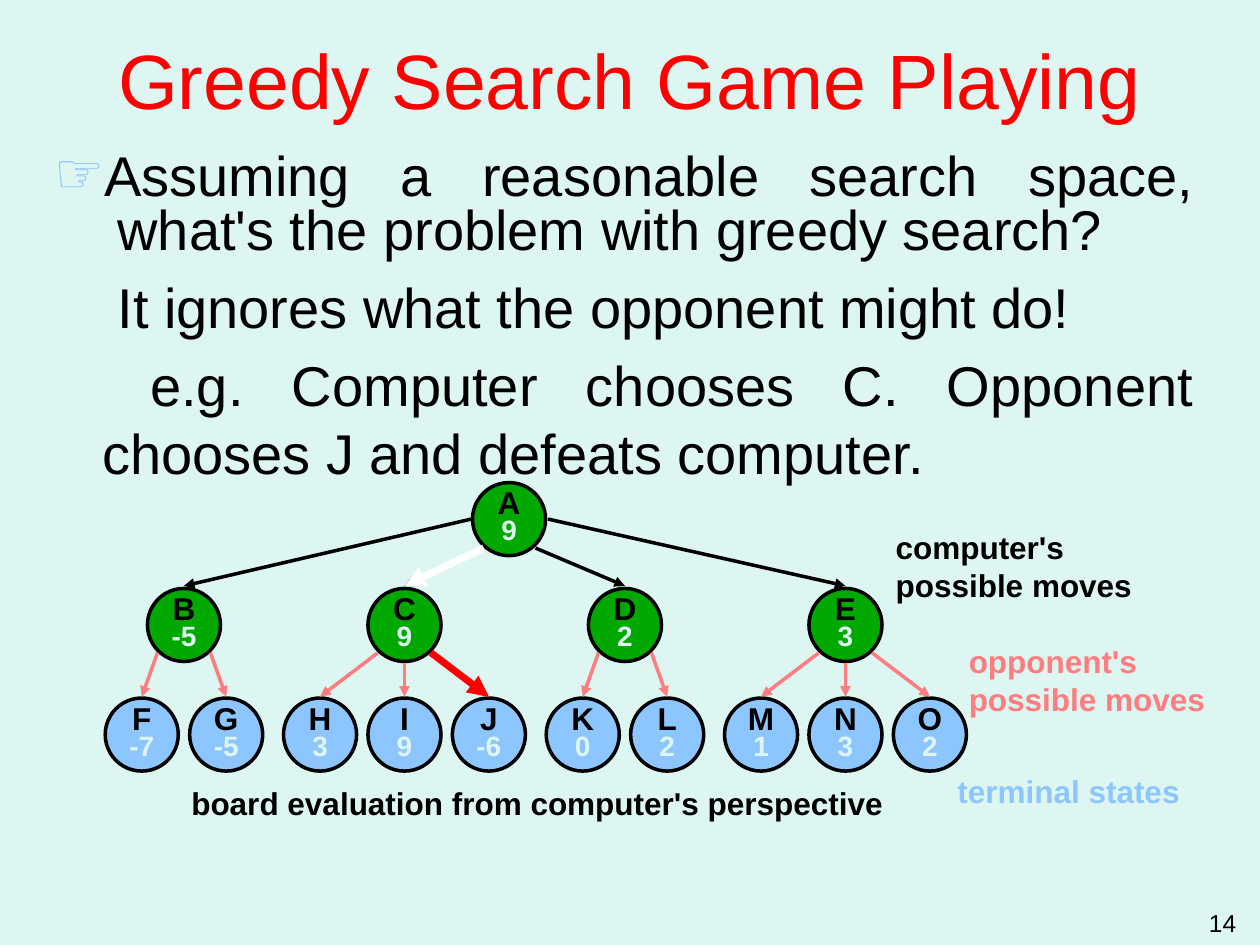
"""Build the greedy search slide with its two-level game tree."""
from dataclasses import dataclass
from lxml.etree import SubElement as Sub
from pptx import Presentation as Deck
from pptx.dml.color import RGBColor as Color
from pptx.enum.shapes import MSO_CONNECTOR as Wire, MSO_SHAPE as Form
from pptx.enum.text import MSO_ANCHOR as Anchor, MSO_AUTO_SIZE as Fit, PP_ALIGN as Align
from pptx.oxml.ns import qn
from pptx.util import Inches, Pt

BLACK = Color(0x00, 0x00, 0x00)
WHITE = Color(0xFF, 0xFF, 0xFF)
RED = Color(0xFF, 0x00, 0x00)
PINK = Color(0xFF, 0x7C, 0x80)
GREEN = Color(0x00, 0xA8, 0x00)
BLUE = Color(0x8D, 0xC6, 0xFF)
PALE = Color(0xDE, 0xF6, 0xF1)
SIZE = 0.58


@dataclass
class Node:
    name: str
    score: str
    mid: float
    top: float
    fill: Color


@dataclass
class Link:
    start: tuple[float, float]
    end: tuple[float, float]
    color: Color
    width: float = 2


@dataclass
class Label:
    text: str
    box: tuple[float, float, float, float]
    color: Color = BLACK
    size: float = 18
    bold: bool = True
    align: Align = Align.LEFT


def add_run(para, text: str, size: float, color: Color, bold: bool = False) -> None:
    run = para.add_run()
    run.text = text
    font = run.font
    font.name, font.size, font.bold = "Arial", Pt(size), bold
    font.color.rgb = color


def add_lines(para, text: str, size: float, color: Color, bold: bool = False) -> None:
    for i, line in enumerate(text.split("\n")):
        if i:
            para.add_line_break()
        add_run(para, line, size, color, bold)


def place(shape, left: float, top: float, width: float, height: float) -> None:
    shape.left, shape.top = Inches(left), Inches(top)
    shape.width, shape.height = Inches(width), Inches(height)


def draw_node(slide, node: Node) -> None:
    left = node.mid - SIZE / 2
    disc = slide.shapes.add_shape(
        Form.OVAL, Inches(left), Inches(node.top), Inches(SIZE), Inches(SIZE))
    disc.shadow.inherit = False
    disc.fill.solid()
    disc.fill.fore_color.rgb = node.fill
    disc.line.color.rgb = BLACK
    disc.line.width = Pt(2)
    frame = disc.text_frame
    frame.word_wrap = False
    frame.vertical_anchor = Anchor.MIDDLE
    rows = ((node.name, 18, BLACK), (node.score, 16, PALE))
    for i, (text, size, color) in enumerate(rows):
        para = frame.add_paragraph() if i else frame.paragraphs[0]
        para.alignment, para.line_spacing = Align.CENTER, 0.75
        add_run(para, text, size, color, True)


def draw_link(slide, link: Link) -> None:
    ends = [Inches(n) for n in (*link.start, *link.end)]
    wire = slide.shapes.add_connector(Wire.STRAIGHT, *ends)
    wire.line.color.rgb = link.color
    wire.line.width = Pt(link.width)
    Sub(wire.line._get_or_add_ln(), qn("a:tailEnd"), type="triangle")
    Sub(wire._element.spPr, qn("a:effectLst"))


def draw_label(slide, label: Label) -> None:
    box = slide.shapes.add_textbox(*[Inches(n) for n in label.box])
    box.text_frame.word_wrap = True
    para = box.text_frame.paragraphs[0]
    para.alignment = label.align
    add_lines(para, label.text, label.size, label.color, label.bold)


def fill_title(slide) -> None:
    title = slide.shapes.title
    place(title, 0.5, 0, 9, 1.25)
    frame = title.text_frame
    frame.auto_size, frame.vertical_anchor = Fit.NONE, Anchor.MIDDLE
    frame.paragraphs[0].alignment = Align.CENTER
    add_run(frame.paragraphs[0], "Greedy Search Game Playing", 44, RED)


def fill_body(slide) -> None:
    body = slide.placeholders[1]
    place(body, 0.33, 1.17, 9.25, 3.42)
    frame = body.text_frame
    frame.auto_size = Fit.NONE
    for i, text in enumerate(BODY):
        para = frame.add_paragraph() if i else frame.paragraphs[0]
        para.alignment = Align.JUSTIFY
        para.line_spacing = 1.0 if i else 0.8
        para.space_before = Pt(6.4 if i else 0)
        props = para._p.get_or_add_pPr()
        props.set("marL", str(Inches(0.38)))
        props.set("indent", str(Inches(-0.38)))
        if i:
            Sub(props, qn("a:buNone"))
        else:
            Sub(Sub(props, qn("a:buClr")), qn("a:srgbClr"), val=str(BLUE))
            Sub(props, qn("a:buChar"), char="☞")
        add_lines(para, text, 32, BLACK)


def make_tree() -> tuple[list[Node], list[Link]]:
    root = Node("A", "9", 4.04, 3.83, GREEN)
    nodes, links, bold = [root], [], []
    starts = ((-0.3, 4.12), (-0.2, 4.35), (0.21, 4.35), (0.31, 4.12))
    for i, (name, score, kids) in enumerate(TREE):
        mid = 1.46 + 1.75 * i
        nodes.append(Node(name, score, mid, 4.67, GREEN))
        shift, drop = starts[i]
        link = Link((root.mid + shift, drop), (mid, 4.65), BLACK)
        links.append(link)
        if name == "C":
            bold.append(Link(link.start, link.end, WHITE, 4))
        for j, (leaf, worth) in enumerate(kids):
            step = j - (len(kids) - 1) / 2
            spot = mid + step * 0.67
            side = (step > 0) - (step < 0)
            nodes.append(Node(leaf, worth, spot, 5.54, BLUE))
            link = Link((mid + 0.21 * side, 5.18 if side else 5.26), (spot, 5.53), PINK)
            links.append(link)
            if leaf == "J":
                bold.append(Link(link.start, link.end, RED, 4))
    return nodes, links + bold


BODY = (
    "Assuming a reasonable search space,\n what's the problem with greedy search?",
    "\t It ignores what the opponent might do!",
    "\t e.g. Computer chooses C. Opponent chooses J and defeats computer.",
)
TREE = (
    ("B", "-5", (("F", "-7"), ("G", "-5"))),
    ("C", "9", (("H", "3"), ("I", "9"), ("J", "-6"))),
    ("D", "2", (("K", "0"), ("L", "2"))),
    ("E", "3", (("M", "1"), ("N", "3"), ("O", "2"))),
)
LABELS = (
    Label("computer's\npossible moves", (7.01, 4.14, 2.08, 0.7)),
    Label("opponent's\npossible moves", (7.59, 5.05, 2.08, 0.7), PINK),
    Label("board evaluation from computer's perspective", (1.42, 6.17, 5.69, 0.4)),
    Label("terminal states", (7.5, 6.08, 1.97, 0.4), BLUE),
    Label("14", (7.58, 7.16, 2.33, 0.25), size=14, bold=False, align=Align.RIGHT),
)


def main() -> None:
    deck = Deck()
    deck.slide_width, deck.slide_height = Inches(10), Inches(7.5)
    slide = deck.slides.add_slide(deck.slide_layouts[1])
    slide.background.fill.solid()
    slide.background.fill.fore_color.rgb = PALE
    fill_title(slide)
    fill_body(slide)
    nodes, links = make_tree()
    for node in nodes:
        draw_node(slide, node)
    for link in links:
        draw_link(slide, link)
    for label in LABELS:
        draw_label(slide, label)
    deck.save("out.pptx")


if __name__ == "__main__":
    main()
